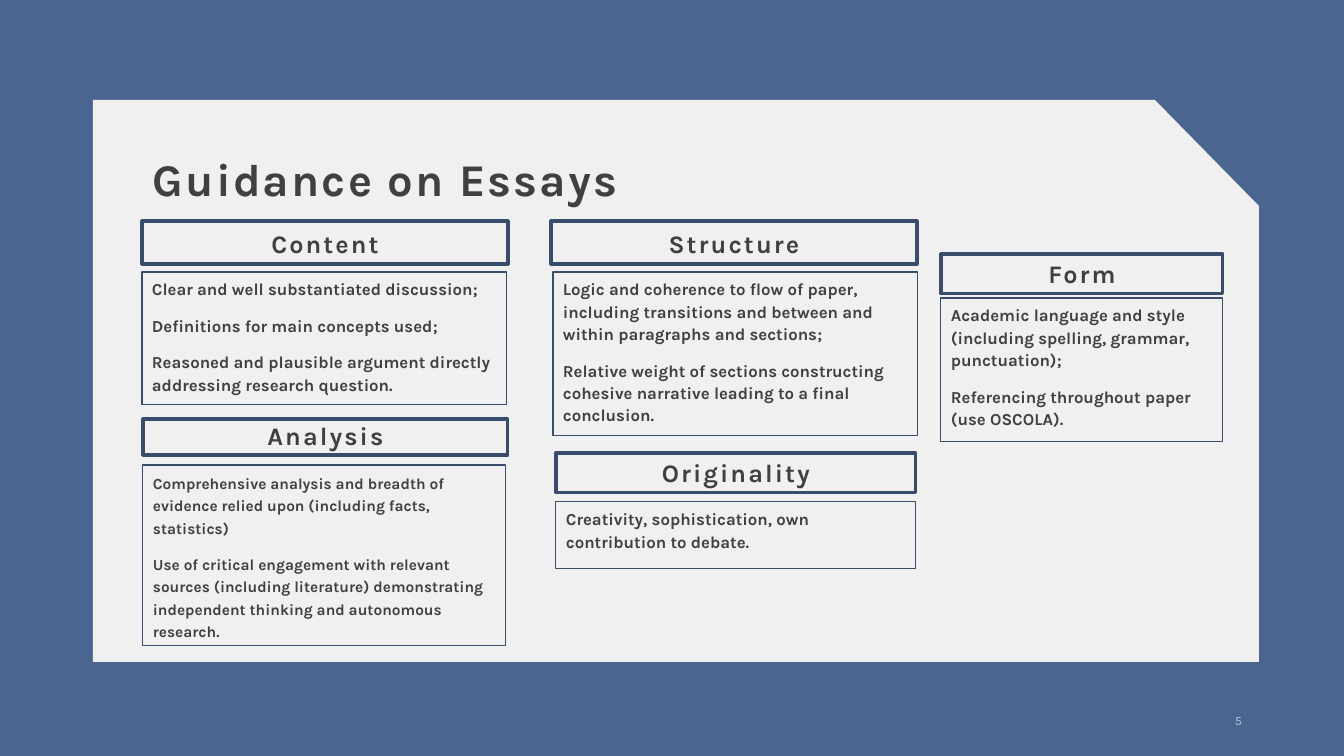
from pptx import Presentation
from pptx import util as u
from pptx.dml.color import RGBColor
from pptx.enum import shapes, text

BLUE = RGBColor(0x4A, 0x65, 0x90)
NAVY = RGBColor(0x38, 0x4C, 0x6C)
PAPER = RGBColor(0xF1, 0xF0, 0xF0)
INK = RGBColor(0x40, 0x40, 0x40)
PALE = RGBColor(0xB2, 0xC0, 0xD7)
EMU_PER_PX = 914400 / 100.8


def px(n):
    return u.Emu(round(n * EMU_PER_PX))


class Deck:
    font = "Karla"

    def __init__(self, width, height):
        self.prs = Presentation()
        self.prs.slide_width, self.prs.slide_height = px(width), px(height)
        self.s = None

    def add_slide(self, color):
        self.s = self.prs.slides.add_slide(self.prs.slide_layouts[6])
        fill = self.s.background.fill
        fill.solid()
        fill.fore_color.rgb = color

    def panel(self, points, color):
        builder = self.s.shapes.build_freeform(*points[0], scale=EMU_PER_PX)
        builder.add_line_segments(points[1:], close=True)
        sp = builder.convert_to_shape()
        sp.shadow.inherit = False
        sp.fill.solid()
        sp.fill.fore_color.rgb = color
        sp.line.fill.background()

    def set_text(self, sp, lines, size, color=INK, bold=True, spacing=0,
                 line=None, before=0, align=text.PP_ALIGN.LEFT,
                 anchor=text.MSO_ANCHOR.TOP):
        tf = sp.text_frame
        tf.word_wrap = True
        tf.vertical_anchor = anchor
        tf.text = "\n".join(lines)
        for p in tf.paragraphs:
            p.alignment = align
            p.line_spacing = line
            p.space_before = u.Pt(before)
            for r in p.runs:
                r.font.name = self.font
                r.font.size = u.Pt(size)
                r.font.bold = bold
                r.font.color.rgb = color
                if spacing:
                    r._r.get_or_add_rPr().set("spc", str(spacing))

    def label(self, box, words, size, **style):
        sp = self.s.shapes.add_textbox(*map(px, box))
        self.set_text(sp, [words], size, **style)

    def frame(self, box, weight):
        sp = self.s.shapes.add_shape(shapes.MSO_SHAPE.RECTANGLE, *map(px, box))
        sp.shadow.inherit = False
        sp.fill.background()
        sp.line.color.rgb = NAVY
        sp.line.width = u.Pt(weight)
        return sp

    def heading(self, box, words, line=0.9):
        self.set_text(self.frame(box, 2.25), [words], 18, spacing=150, line=line,
                      before=10, align=text.PP_ALIGN.CENTER,
                      anchor=text.MSO_ANCHOR.BOTTOM)

    def body(self, box, lines, size=12):
        self.set_text(self.frame(box, 0.75), lines, size, line=u.Pt(16), before=10)


def main():
    deck = Deck(1344, 756)
    deck.add_slide(BLUE)
    deck.panel([(93, 100), (1155, 100), (1259, 206), (1259, 662), (93, 662)], PAPER)
    deck.label((143, 152, 694, 55), "Guidance on Essays", 32.4, spacing=150, line=0.9)

    deck.heading((142, 221, 366, 43), "Content")
    deck.body((142, 272, 365, 133), [
        "Clear and well substantiated discussion;",
        "Definitions for main concepts used;",
        "Reasoned and plausible argument directly addressing research question.",
    ])
    deck.heading((143, 419, 365, 36), "Analysis", line=0.8)
    deck.body((143, 465, 363, 181), [
        "Comprehensive analysis and breadth of evidence relied upon "
        "(including facts, statistics)",
        "Use of critical engagement with relevant sources (including literature) "
        "demonstrating independent thinking and autonomous research.",
    ], size=11)

    deck.heading((551, 221, 366, 43), "Structure")
    deck.body((553, 272, 365, 164), [
        "Logic and coherence to flow of paper, including transitions and between "
        "and within paragraphs and sections;",
        "Relative weight of sections constructing cohesive narrative leading to "
        "a final conclusion.",
    ])
    deck.heading((556, 453, 360, 40), "Originality")
    deck.body((556, 502, 360, 67), [
        "Creativity, sophistication, own contribution to debate.",
    ])

    deck.heading((941, 254, 282, 40), "Form")
    deck.body((941, 298, 282, 144), [
        "Academic language and style (including spelling, grammar, punctuation);",
        "Referencing throughout paper (use OSCOLA).",
    ])

    deck.label((950, 701, 302, 40), "5", 9, color=PALE, bold=False,
               align=text.PP_ALIGN.RIGHT, anchor=text.MSO_ANCHOR.MIDDLE)
    deck.prs.save("out.pptx")


if __name__ == "__main__":
    main()
